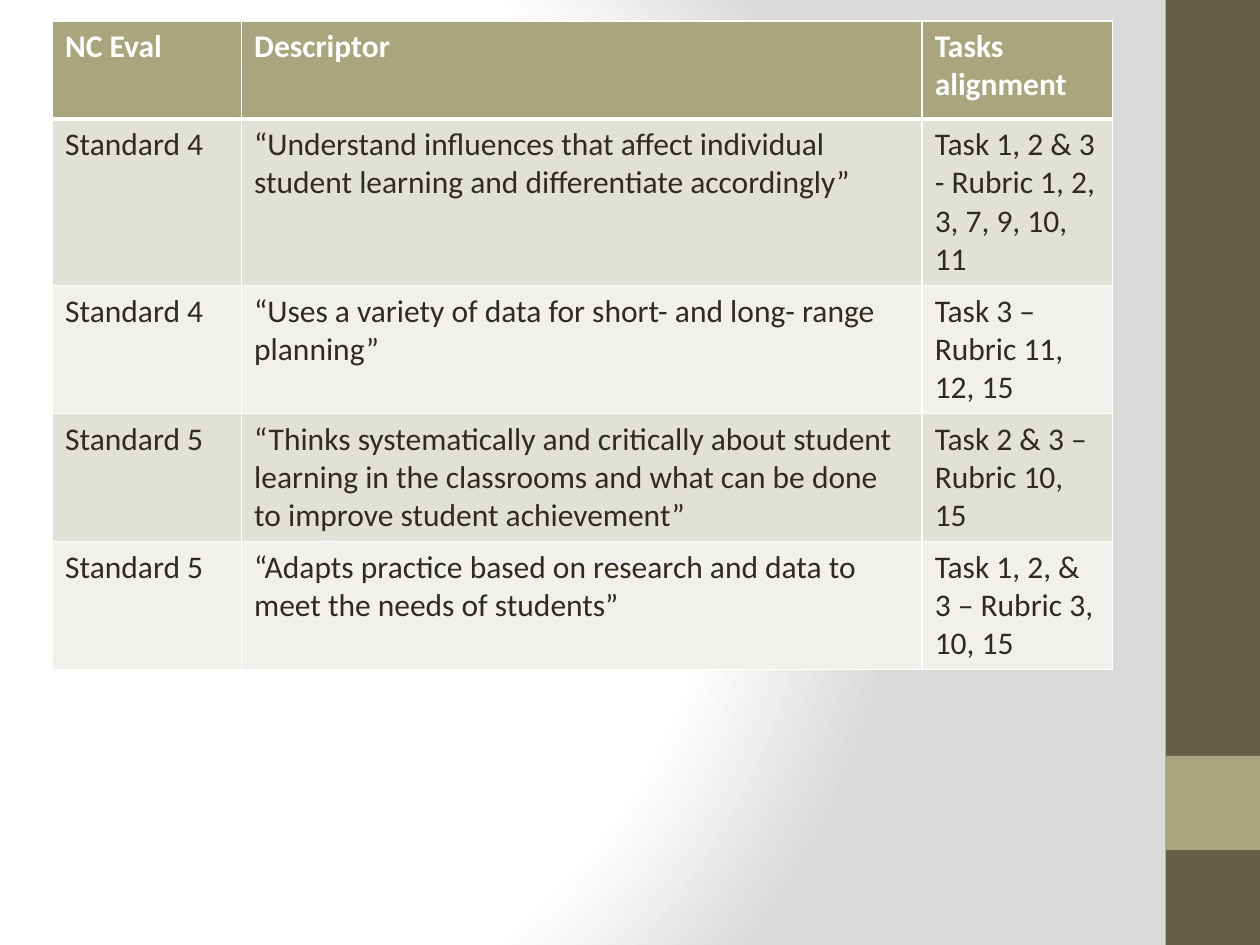
"""Build a slide that aligns NC evaluation standards with task rubrics."""
from dataclasses import dataclass

import pptx
import pptx.dml.color
import pptx.enum.shapes
import pptx.oxml
import pptx.oxml.ns
import pptx.slide
import pptx.table
import pptx.util

Cm = pptx.util.Cm
RGBColor = pptx.dml.color.RGBColor

WHITE = RGBColor(0xFF, 0xFF, 0xFF)
GREY = RGBColor(0xDA, 0xDA, 0xDA)
BROWN = RGBColor(0x67, 0x5E, 0x47)
OLIVE = RGBColor(0xA9, 0xA5, 0x7C)
INK = RGBColor(0x2F, 0x2B, 0x20)
BANDS = (RGBColor(0xE2, 0xE1, 0xD7), RGBColor(0xF1, 0xF0, 0xEC))

NS = pptx.oxml.ns.nsdecls("a", "p")
COLUMN_WIDTHS = (3.81, 13.72, 3.84)
THIN, THICK = 1, 3


@dataclass
class Bar:
    top: float
    height: float
    color: RGBColor


@dataclass
class Row:
    height: float
    cells: tuple[str, str, str]


BARS = (Bar(0, 19.05, BROWN), Bar(15.24, 1.9, OLIVE))

ROWS = (
    Row(1.98, ("NC Eval", "Descriptor", "Tasks alignment")),
    Row(3.36, ("Standard 4",
               "“Understand influences that affect individual student learning "
               "and differentiate accordingly”",
               "Task 1, 2 & 3 - Rubric 1, 2, 3, 7, 9, 10, 11")),
    Row(2.58, ("Standard 4",
               "“Uses a variety of data for short- and long- range planning”",
               "Task 3 – Rubric 11, 12, 15")),
    Row(2.58, ("Standard 5",
               "“Thinks systematically and critically about student learning in "
               "the classrooms and what can be done to improve student achievement”",
               "Task 2 & 3 – Rubric 10, 15")),
    Row(2.58, ("Standard 5",
               "“Adapts practice based on research and data to meet the needs "
               "of students”",
               "Task 1, 2, & 3 – Rubric 3, 10, 15")),
)


def set_background(s: pptx.slide.Slide) -> None:
    stops = "".join(
        f'<a:gs pos="{pos * 1000}"><a:srgbClr val="{color}"/></a:gs>'
        for pos, color in ((0, WHITE), (75, WHITE), (100, GREY)))
    bg = pptx.oxml.parse_xml(
        f'<p:bg {NS}><p:bgPr><a:gradFill rotWithShape="1"><a:gsLst>{stops}</a:gsLst>'
        '<a:path path="circle"><a:fillToRect l="20000" t="50000" r="100000" b="50000"/>'
        '</a:path></a:gradFill><a:effectLst/></p:bgPr></p:bg>')
    s._element.cSld.insert(0, bg)


def add_bar(s: pptx.slide.Slide, bar: Bar) -> None:
    sp = s.shapes.add_shape(pptx.enum.shapes.MSO_SHAPE.RECTANGLE,
                            Cm(23.5), Cm(bar.top), Cm(1.9), Cm(bar.height))
    sp.shadow.inherit = False
    sp.fill.solid()
    sp.fill.fore_color.rgb = bar.color
    sp.line.fill.background()


def set_borders(cell: pptx.table._Cell, top: float, bottom: float) -> None:
    tc_pr = cell._tc.get_or_add_tcPr()
    for side, width in {"L": THIN, "R": THIN, "T": top, "B": bottom}.items():
        tc_pr.append(pptx.oxml.parse_xml(
            f'<a:ln{side} {NS} w="{pptx.util.Pt(width)}"><a:solidFill>'
            f'<a:srgbClr val="{WHITE}"/></a:solidFill></a:ln{side}>'))


def fill_cell(cell: pptx.table._Cell, text: str, row: int) -> None:
    header = row == 0
    set_borders(cell, THICK if row == 1 else THIN, THICK if header else THIN)
    cell.fill.solid()
    cell.fill.fore_color.rgb = OLIVE if header else BANDS[(row - 1) % 2]
    r = cell.text_frame.paragraphs[0].add_run()
    r.text = text
    font_format = {"name": "Calibri", "size": pptx.util.Pt(18), "bold": header}
    for name, value in font_format.items():
        setattr(r.font, name, value)
    r.font.color.rgb = WHITE if header else INK


def add_alignment_table(s: pptx.slide.Slide) -> None:
    table = s.shapes.add_table(
        len(ROWS), len(COLUMN_WIDTHS), Cm(1.06), Cm(0.42),
        Cm(sum(COLUMN_WIDTHS)), Cm(sum(row.height for row in ROWS))).table
    for column, width in zip(table.columns, COLUMN_WIDTHS):
        column.width = Cm(width)
    for i, row in enumerate(ROWS):
        table.rows[i].height = Cm(row.height)
        for j, text in enumerate(row.cells):
            fill_cell(table.cell(i, j), text, i)


def main() -> None:
    prs = pptx.Presentation()
    prs.slide_width, prs.slide_height = Cm(25.4), Cm(19.05)
    s = prs.slides.add_slide(prs.slide_layouts[6])
    set_background(s)
    for bar in BARS:
        add_bar(s, bar)
    add_alignment_table(s)
    prs.save("out.pptx")


if __name__ == "__main__":
    main()
